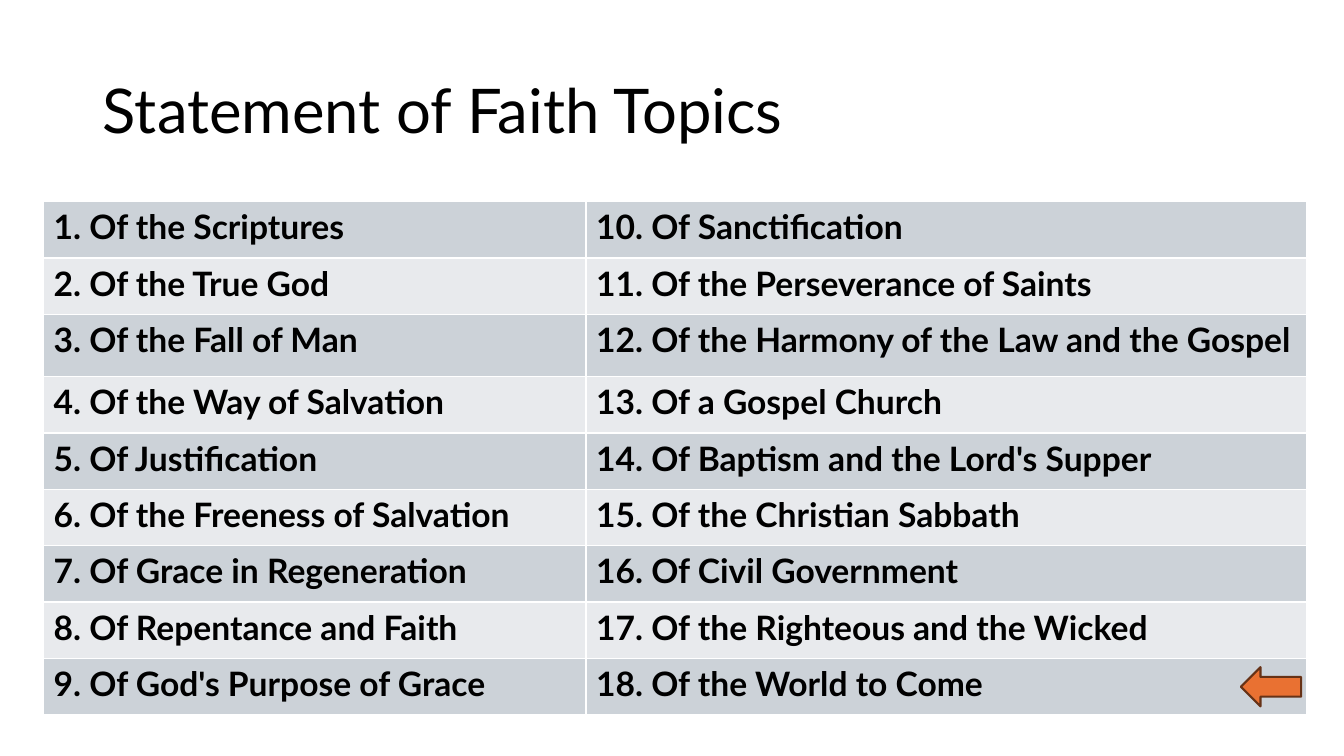
from dataclasses import dataclass

from lxml import etree
from pptx import Presentation
from pptx.dml.color import RGBColor
from pptx.enum.shapes import MSO_SHAPE
from pptx.enum.text import MSO_ANCHOR, PP_ALIGN
from pptx.oxml.ns import qn
from pptx.util import Cm, Pt

RIGHT_ARROW = MSO_SHAPE.RIGHT_ARROW
MIDDLE, TOP = MSO_ANCHOR.MIDDLE, MSO_ANCHOR.TOP
LEFT = PP_ALIGN.LEFT
TITLE_ONLY = 5


@dataclass(frozen=True)
class Theme:
    """Colours, font and type sizes of the slide."""
    font: str = "Lato"
    text: str = "000000"
    bands: tuple = ("CCD2D8", "E8EAED")
    border: str = "FFFFFF"
    arrow: str = "E97132"
    arrow_line: str = "663216"
    title_size: int = 44
    topic_size: int = 24


THEME = Theme()
TOPICS = [
    "Of the Scriptures", "Of the True God", "Of the Fall of Man",
    "Of the Way of Salvation", "Of Justification",
    "Of the Freeness of Salvation", "Of Grace in Regeneration",
    "Of Repentance and Faith", "Of God's Purpose of Grace",
    "Of Sanctification", "Of the Perseverance of Saints",
    "Of the Harmony of the Law and the Gospel", "Of a Gospel Church",
    "Of Baptism and the Lord's Supper", "Of the Christian Sabbath",
    "Of Civil Government", "Of the Righteous and the Wicked",
    "Of the World to Come",
]
COL_WIDTHS = (13.67, 18.16)
ROW_HEIGHTS = (1.42, 1.42, 1.57) + (1.42,) * 6


def set_attrs(obj, values):
    """Set each attribute named in values."""
    for name, value in values.items():
        setattr(obj, name, value)


def write_text(tf, text, size, bold=False):
    """Write one left-aligned run in the theme font."""
    p = tf.paragraphs[0]
    p.alignment = LEFT
    r = p.add_run()
    r.text = text
    set_attrs(r.font, {"name": THEME.font, "size": Pt(size), "bold": bold})
    r.font.color.rgb = RGBColor.from_string(THEME.text)


def set_title(s, text):
    """Place and format the title placeholder."""
    sp = s.shapes.title
    set_attrs(sp, {"left": Cm(2.34), "top": Cm(1.02),
                   "width": Cm(29.21), "height": Cm(3.68)})
    tf = sp.text_frame
    set_attrs(tf, {"vertical_anchor": MIDDLE, "word_wrap": True})
    write_text(tf, text, THEME.title_size)
    tf.paragraphs[0].line_spacing = 0.9


def add_borders(cell):
    """Draw a thin line on all four sides of a cell."""
    tc_pr = cell._tc.get_or_add_tcPr()
    for side in ("a:lnL", "a:lnR", "a:lnT", "a:lnB"):
        ln = etree.SubElement(tc_pr, qn(side), w=str(Pt(1)))
        fill = etree.SubElement(ln, qn("a:solidFill"))
        etree.SubElement(fill, qn("a:srgbClr"), val=THEME.border)


def format_cell(cell, text, band):
    """Fill one topic cell with its text and band colour."""
    cell.vertical_anchor = TOP
    write_text(cell.text_frame, text, THEME.topic_size, bold=True)
    add_borders(cell)
    cell.fill.solid()
    cell.fill.fore_color.rgb = RGBColor.from_string(band)


def add_topics(s):
    """Add the banded table, numbering the topics down each column."""
    n_rows, n_cols = len(ROW_HEIGHTS), len(COL_WIDTHS)
    table = s.shapes.add_table(n_rows, n_cols, Cm(1.1), Cm(5.08),
                               Cm(sum(COL_WIDTHS)), Cm(sum(ROW_HEIGHTS))).table
    set_attrs(table, {"first_row": False, "horz_banding": False})
    for column, width in zip(table.columns, COL_WIDTHS):
        column.width = Cm(width)
    for row, height in zip(table.rows, ROW_HEIGHTS):
        row.height = Cm(height)
    for i, topic in enumerate(TOPICS):
        col, row = divmod(i, n_rows)
        format_cell(table.cell(row, col), f"{i + 1}. {topic}", THEME.bands[row % 2])


def add_arrow(s):
    """Add the arrow that points left at the last topic."""
    sp = s.shapes.add_shape(RIGHT_ARROW, Cm(31.27), Cm(16.81), Cm(1.52), Cm(0.99))
    sp.rotation = 180
    sp.shadow.inherit = False
    sp.fill.solid()
    sp.fill.fore_color.rgb = RGBColor.from_string(THEME.arrow)
    sp.line.color.rgb = RGBColor.from_string(THEME.arrow_line)
    sp.line.width = Pt(1.5)


def main():
    """Build and save the slide."""
    prs = Presentation()
    set_attrs(prs, {"slide_width": Cm(33.87), "slide_height": Cm(19.05)})
    s = prs.slides.add_slide(prs.slide_layouts[TITLE_ONLY])
    set_title(s, "Statement of Faith Topics")
    add_topics(s)
    add_arrow(s)
    prs.save("out.pptx")


if __name__ == "__main__":
    main()
